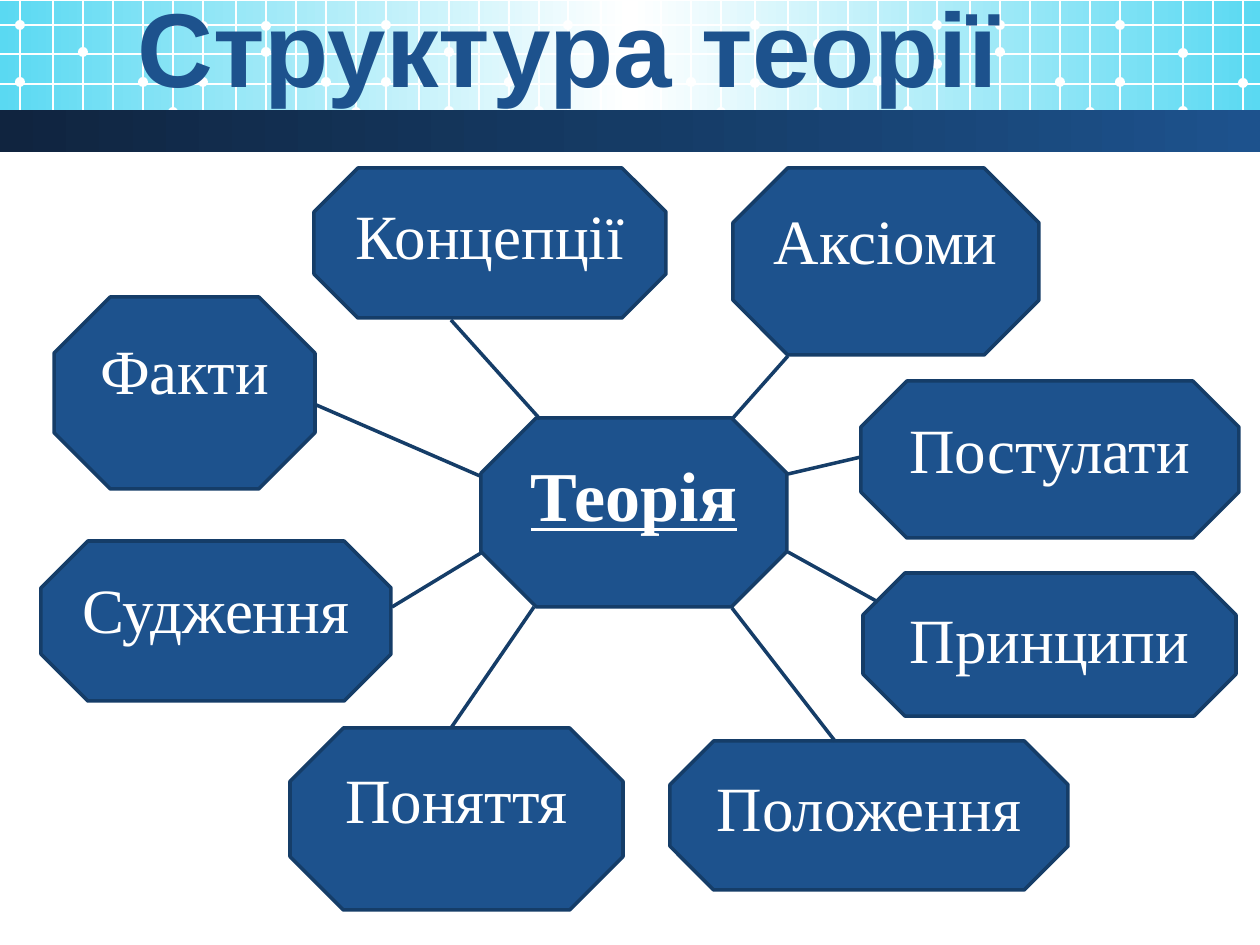
from lxml.etree import SubElement
from pptx import Presentation
from pptx.dml.color import RGBColor
from pptx.enum.shapes import MSO_CONNECTOR, MSO_SHAPE
from pptx.enum.text import MSO_ANCHOR, PP_ALIGN
from pptx.oxml.ns import qn
from pptx.util import Pt

PX = 914400 // 126
COLORS = {
    "white": "FFFFFF",
    "cyan": "5AD9F2",
    "night": "10243F",
    "navy": "153B65",
    "blue": "1D528D",
    "edge": "153D68",
}
COLUMN_STARTS = [20, 203, 386, 568, 755, 937, 1120]
COLUMN_OFFSETS = [0, 33, 63, 93, 123, 153]
ROWS = [25, 54, 84, 112]
DOT_OFFSETS = [0, 0, 63, 63, 123, 153]
DOT_ROWS = [
    [82, 25, 52, 115, 82, 112],
    [82, 26, 52, 26, 82, 112],
    [82, 25, 52, 111, 82, 111],
    [54, 25, 53, 25, 82, 112],
    [83, 25, 44, 112, 81, 111],
    [64, 25, 52, 25, 82, 112],
    [82, 25, 53, 111, 83],
]
PARTS = [
    ("Факти", 54, 297, 261, 192),
    ("Концепції", 314, 168, 352, 150),
    ("Аксіоми", 733, 168, 306, 187),
    ("Постулати", 861, 381, 378, 157),
    ("Судження", 41, 541, 350, 160),
    ("Поняття", 290, 728, 333, 182),
    ("Положення", 670, 741, 398, 149),
    ("Принципи", 863, 573, 373, 143),
]
SPOKES = [
    (480, 476, 314, 404),
    (788, 474, 861, 457),
    (540, 419, 451, 320),
    (733, 418, 788, 356),
    (481, 553, 392, 607),
    (788, 552, 878, 602),
    (534, 607, 451, 728),
    (732, 608, 835, 741),
]


class Deck:
    def __init__(self, s):
        self.s = s

    def shape(self, kind, x, y, w, h, fill="white"):
        sp = self.s.shapes.add_shape(kind, x * PX, y * PX, w * PX, h * PX)
        sp.shadow.inherit = False
        sp.fill.solid()
        sp.fill.fore_color.rgb = RGBColor.from_string(COLORS[fill])
        sp.line.fill.background()
        return sp

    def gradient(self, x, y, w, h, names):
        sp = self.shape(MSO_SHAPE.RECTANGLE, x, y, w, h)
        sp.fill.gradient()
        sp.fill.gradient_angle = 0
        stops = sp._element.spPr.find(qn("a:gradFill")).find(qn("a:gsLst"))
        for gs in list(stops):
            stops.remove(gs)
        for i, name in enumerate(names):
            pos = str(100000 * i // (len(names) - 1))
            gs = SubElement(stops, qn("a:gs"), pos=pos)
            SubElement(gs, qn("a:srgbClr"), val=COLORS[name])

    def line(self, x1, y1, x2, y2, color="white", width=0.75):
        c = self.s.shapes.add_connector(
            MSO_CONNECTOR.STRAIGHT, x1 * PX, y1 * PX, x2 * PX, y2 * PX)
        c.line.color.rgb = RGBColor.from_string(COLORS[color])
        c.line.width = Pt(width)
        SubElement(c._element.spPr, qn("a:effectLst"))

    def dot(self, x, y):
        self.shape(MSO_SHAPE.OVAL, x - 5, y - 5, 10, 10)

    def text(self, sp, text, font, size, color, anchor, bold=False, underline=False):
        tf = sp.text_frame
        tf.word_wrap = True
        tf.vertical_anchor = anchor
        p = tf.paragraphs[0]
        p.alignment = PP_ALIGN.CENTER
        r = p.add_run()
        r.text = text
        r.font.name = font
        r.font.size = Pt(size)
        r.font.bold = bold
        r.font.underline = underline
        r.font.color.rgb = RGBColor.from_string(COLORS[color])
        return p

    def title(self, text, x, y, w, h):
        sp = self.s.shapes.add_textbox(x * PX, y * PX, w * PX, h * PX)
        p = self.text(sp, text, "Arial", 60, "blue", MSO_ANCHOR.BOTTOM, bold=True)
        p.line_spacing = 0.8

    def octagon(self, text, x, y, w, h, size=36, strong=False):
        sp = self.shape(MSO_SHAPE.OCTAGON, x, y, w, h, "blue")
        sp.adjustments[0] = 0.293
        sp.line.color.rgb = RGBColor.from_string(COLORS["edge"])
        sp.line.width = Pt(2)
        self.text(sp, text, "Times New Roman", size, "white", MSO_ANCHOR.TOP,
                  bold=strong, underline=strong)


def main():
    prs = Presentation()
    prs.slide_width, prs.slide_height = 1260 * PX, 945 * PX
    d = Deck(prs.slides.add_slide(prs.slide_layouts[6]))

    d.gradient(0, 1, 1260, 129, ["cyan", "white", "cyan"])
    for start, dot_rows in zip(COLUMN_STARTS, DOT_ROWS):
        for offset in COLUMN_OFFSETS:
            if start + offset < 1260:
                d.line(start + offset, 0, start + offset, 139)
        for offset, y in zip(DOT_OFFSETS, dot_rows):
            d.dot(start + offset, y)
    for y in ROWS:
        d.line(0, y, 1260, y)
    d.gradient(0, 110, 1260, 42, ["night", "navy", "blue"])
    d.title("Структура теорії", -25, -1, 1186, 115)

    d.octagon("Теорія", 481, 418, 306, 189, size=40, strong=True)
    for part in PARTS:
        d.octagon(*part)
    for spoke in SPOKES:
        d.line(*spoke, color="edge", width=2)

    prs.save("out.pptx")


if __name__ == "__main__":
    main()
